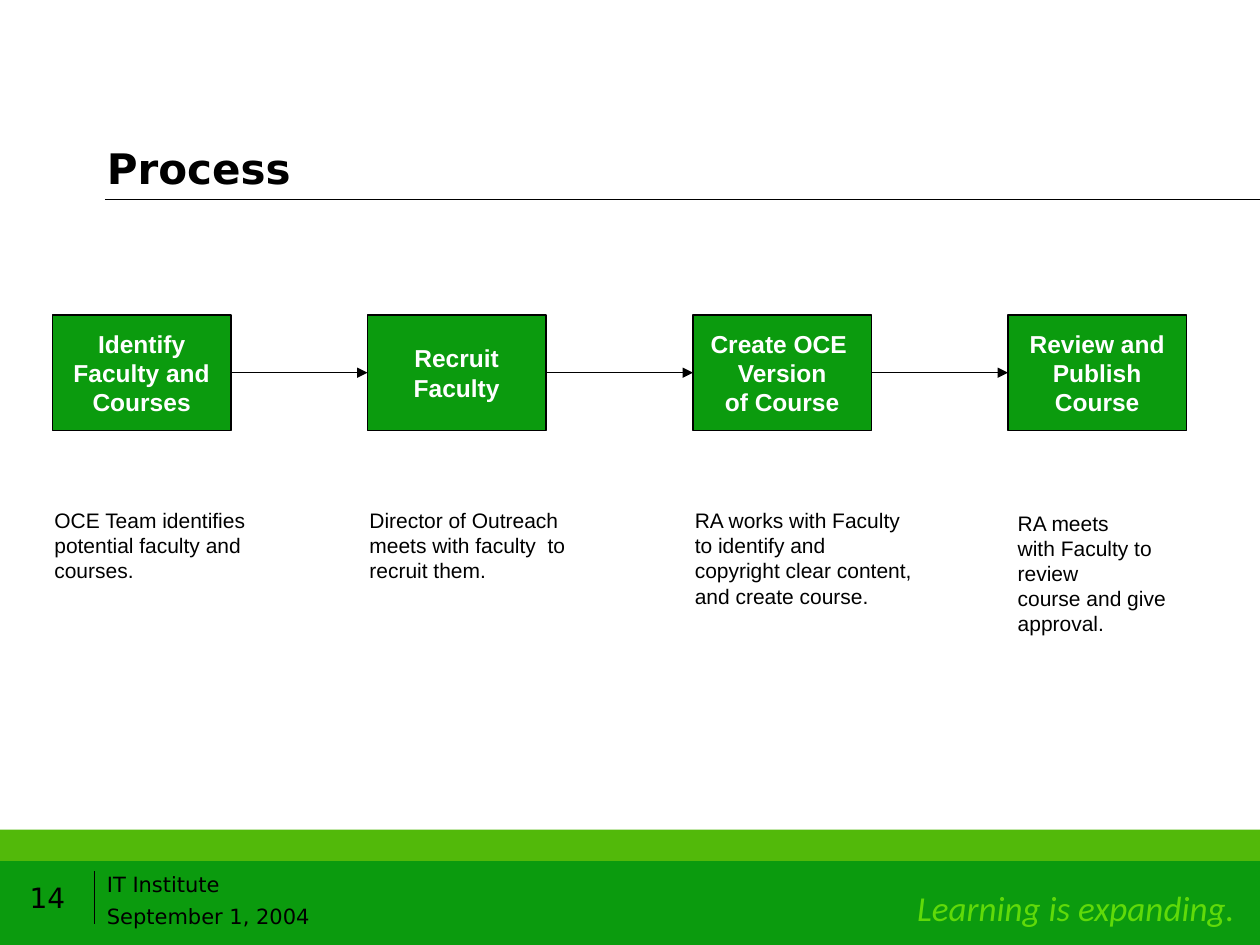
from dataclasses import dataclass

from lxml import etree
from pptx import Presentation
from pptx.dml.color import RGBColor
from pptx.enum.shapes import MSO_CONNECTOR, MSO_SHAPE
from pptx.enum.text import MSO_ANCHOR, PP_ALIGN
from pptx.oxml.ns import qn
from pptx.util import Inches, Pt

LEFT, CENTER, RIGHT = PP_ALIGN.LEFT, PP_ALIGN.CENTER, PP_ALIGN.RIGHT
TOP, MIDDLE, BOTTOM = MSO_ANCHOR.TOP, MSO_ANCHOR.MIDDLE, MSO_ANCHOR.BOTTOM
RECT, STRAIGHT = MSO_SHAPE.RECTANGLE, MSO_CONNECTOR.STRAIGHT
SIDE_LEFT, SIDE_RIGHT = 1, 3


@dataclass(frozen=True)
class Theme:
    black: str = "000000"
    white: str = "FFFFFF"
    green: str = "0B9B0E"
    band: str = "52B90A"
    lime: str = "60DA09"
    body: str = "Arial"
    heading: str = "DejaVu Sans"
    script: str = "Calibri"
    title_size: int = 24
    tagline_size: int = 20
    number_size: int = 16
    step_size: int = 14
    note_size: int = 12
    line: float = 0.75


THEME = Theme()
COLS, ROWS = 120, 90
STEP_TOP, STEP_W, STEP_H = 30, 17, 11

STEPS = [
    {"col": 5, "label": ["Identify", "Faculty and", "Courses"],
     "note": ["OCE Team identifies", "potential faculty and", "courses."],
     "note_at": (4, 47.75, 21.4, 8.4), "wrap": False},
    {"col": 35, "label": ["Recruit", "Faculty"],
     "note": ["Director of Outreach", "meets with faculty  to", "recruit them."],
     "note_at": (34, 47.75, 21.2, 8.4), "wrap": False},
    {"col": 66, "label": ["Create OCE ", "Version", "of Course"],
     "note": ["RA works with Faculty", "to identify and",
              "copyright clear content,", "and create course."],
     "note_at": (65, 47.75, 23.3, 10.8), "wrap": False},
    {"col": 96, "label": ["Review and", "Publish", "Course"],
     "note": ["RA meets", "with Faculty to review", "course and give", "approval."],
     "note_at": (95.75, 48, 20.4, 10.8), "wrap": True},
]
FOOTER = [
    ("IT Institute", (9, 83, 38, 3), BOTTOM, LEFT, THEME.note_size),
    ("September 1, 2004", (9, 86, 38, 3), BOTTOM, LEFT, THEME.note_size),
    ("14", (0, 83, 9, 5), MIDDLE, CENTER, THEME.number_size),
]
RULES = [((10, 19), (COLS, 19)), ((9, 83), (9, 88))]

prs = Presentation()
prs.slide_width, prs.slide_height = Inches(10), Inches(7.5)
slide = prs.slides.add_slide(prs.slide_layouts[6])


def place(*cells):
    sizes = (prs.slide_width / COLS, prs.slide_height / ROWS)
    return [round(c * sizes[i % 2]) for i, c in enumerate(cells)]


def write(sp, lines, *, size, font=THEME.body, color=THEME.black, bold=False,
          italic=False, align=LEFT, anchor=TOP, wrap=True):
    tf = sp.text_frame
    tf.word_wrap, tf.vertical_anchor = wrap, anchor
    for i, line in enumerate(lines):
        p = tf.paragraphs[0] if i == 0 else tf.add_paragraph()
        p.alignment = align
        r = p.add_run()
        r.text = line
        r.font.name, r.font.size = font, Pt(size)
        r.font.bold, r.font.italic = bold, italic
        r.font.color.rgb = RGBColor.from_string(color)


def add_text(at, lines, **fmt):
    write(slide.shapes.add_textbox(*place(*at)), lines, **fmt)


def add_rect(at, fill, outlined=False):
    sp = slide.shapes.add_shape(RECT, *place(*at))
    sp.shadow.inherit = False
    sp.fill.solid()
    sp.fill.fore_color.rgb = RGBColor.from_string(fill)
    if outlined:
        sp.line.color.rgb = RGBColor.from_string(THEME.black)
        sp.line.width = Pt(THEME.line)
    else:
        sp.line.fill.background()
    return sp


def add_line(start, end, arrow=False):
    cn = slide.shapes.add_connector(STRAIGHT, *place(*start, *end))
    cn.line.color.rgb = RGBColor.from_string(THEME.black)
    cn.line.width = Pt(THEME.line)
    if arrow:
        etree.SubElement(cn.line._get_or_add_ln(), qn("a:tailEnd"), type="triangle")
    etree.SubElement(cn._element.spPr, qn("a:effectLst"))
    return cn


add_rect((0, 79, COLS, 9), THEME.band)
footer = add_rect((0, 82, COLS, 8), THEME.green)
footer.text_frame.margin_right = Inches(0.2)
footer.text_frame.margin_top = Inches(0.12)
write(footer, ["Learning is expanding."], size=THEME.tagline_size, font=THEME.script,
      color=THEME.lime, italic=True, align=RIGHT, anchor=MIDDLE, wrap=False)
for start, end in RULES:
    add_line(start, end)
for text, at, anchor, align, size in FOOTER:
    add_text(at, [text], size=size, font=THEME.heading, align=align, anchor=anchor)
add_text((9, 8, 102, 11), ["Process"], size=THEME.title_size, font=THEME.heading,
         bold=True, anchor=BOTTOM)

boxes = []
for step in STEPS:
    sp = add_rect((step["col"], STEP_TOP, STEP_W, STEP_H), THEME.green, outlined=True)
    write(sp, step["label"], size=THEME.step_size, color=THEME.white, bold=True,
          align=CENTER, anchor=MIDDLE, wrap=False)
    add_text(step["note_at"], step["note"], size=THEME.note_size, wrap=step["wrap"])
    boxes.append(sp)

mid = STEP_TOP + STEP_H / 2
for i in range(len(STEPS) - 1):
    cn = add_line((STEPS[i]["col"] + STEP_W, mid), (STEPS[i + 1]["col"], mid), arrow=True)
    cn.begin_connect(boxes[i], SIDE_RIGHT)
    cn.end_connect(boxes[i + 1], SIDE_LEFT)

prs.save("out.pptx")
